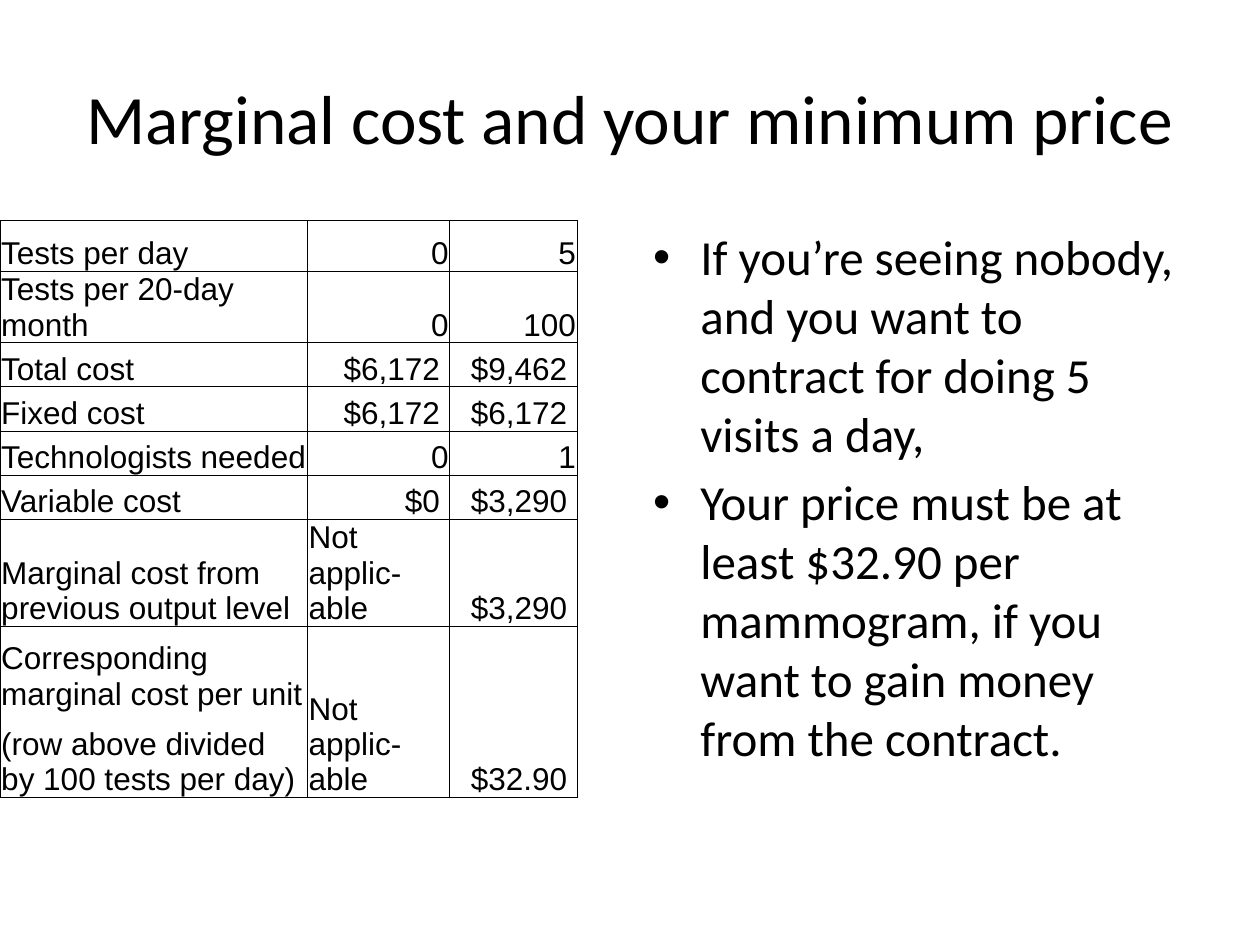
from lxml import etree
from pptx import Presentation
from pptx.dml.color import RGBColor
from pptx.enum import text
from pptx.oxml import ns
from pptx.util import Pt

BLACK = "000000"
SIDES = ("lnL", "lnR", "lnT", "lnB")
COL_WIDTHS = (175.7, 81.4, 72.7)
ROW_HEIGHTS = (28.8,) + (25.2,) * 5 + (49,) * 3
COSTS = (
    ("Tests per day", "0", "5"),
    ("Tests per 20-day month", "0", "100"),
    ("Total cost", "$6,172 ", "$9,462 "),
    ("Fixed cost", "$6,172 ", "$6,172 "),
    ("Technologists needed", "0", "1"),
    ("Variable cost", "$0 ", "$3,290 "),
    ("Marginal cost from previous output level", "Not applic-able", "$3,290 "),
    ("Corresponding marginal cost per unit", "Not applic-able", "$32.90 "),
    ("(row above divided by 100 tests per day)", "", ""),
)
POINTS = (
    "If you’re seeing nobody, and you want to contract for doing 5 visits a day,",
    "Your price must be at least $32.90 per mammogram, if you want to gain "
    "money from the contract.",
)


def set_font(p, name, size, color=BLACK):
    p.font.name = name
    p.font.size = Pt(size)
    p.font.color.rgb = RGBColor.from_string(color)


def fill_placeholder(sp, box, lines, size):
    sp.left, sp.top, sp.width, sp.height = map(Pt, box)
    tf = sp.text_frame
    tf.auto_size = text.MSO_AUTO_SIZE.NONE
    tf.text = "\n".join(lines)
    for p in tf.paragraphs:
        set_font(p, "Calibri", size)


def set_borders(cell, hidden=()):
    tc_pr = cell._tc.get_or_add_tcPr()
    for side in SIDES:
        ln = etree.SubElement(tc_pr, ns.qn(f"a:{side}"), w=str(Pt(0.5)))
        if side in hidden:
            etree.SubElement(ln, ns.qn("a:noFill"))
        else:
            fill = etree.SubElement(ln, ns.qn("a:solidFill"))
            etree.SubElement(fill, ns.qn("a:srgbClr"), val=BLACK)


def format_cell(cell, value, align, hidden):
    set_borders(cell, hidden)
    cell.fill.background()
    cell.margin_left = cell.margin_right = cell.margin_top = Pt(0.72)
    cell.margin_bottom = 0
    cell.vertical_anchor = text.MSO_ANCHOR.BOTTOM
    p = cell.text_frame.paragraphs[0]
    p.text = value
    p.alignment = align
    set_font(p, "Arial", 18)


def add_cost_table(s, left, top):
    frame = s.shapes.add_table(len(COSTS), len(COL_WIDTHS), Pt(left), Pt(top),
                               Pt(sum(COL_WIDTHS)), Pt(sum(ROW_HEIGHTS)))
    table = frame.table
    table.first_row = table.horz_banding = False
    for column, width in zip(table.columns, COL_WIDTHS):
        column.width = Pt(width)
    for row, height in zip(table.rows, ROW_HEIGHTS):
        row.height = Pt(height)

    # The last label runs over two rows with no line between them
    last = len(COSTS) - 1
    open_sides = {(last - 1, 0): ("lnB",), (last, 0): ("lnT",)}
    for r, values in enumerate(COSTS):
        for c, value in enumerate(values):
            is_label = c == 0 or value.startswith("Not")
            align = text.PP_ALIGN.LEFT if is_label else text.PP_ALIGN.RIGHT
            format_cell(table.cell(r, c), value, align, open_sides.get((r, c), ()))
    for c in (1, 2):
        table.cell(last - 1, c).merge(table.cell(last, c))


def main():
    prs = Presentation()
    prs.slide_width, prs.slide_height = Pt(720), Pt(540)
    s = prs.slides.add_slide(prs.slide_layouts[1])

    # Title
    fill_placeholder(s.shapes.title, (36, 21.6, 648, 90),
                     ["Marginal cost and your minimum price"], 39.6)
    # Cost table on the left
    add_cost_table(s, 0, 126)
    # Conclusions on the right
    fill_placeholder(s.placeholders[1], (366, 126, 318, 356.4), POINTS, 28)

    prs.save("out.pptx")


if __name__ == "__main__":
    main()
